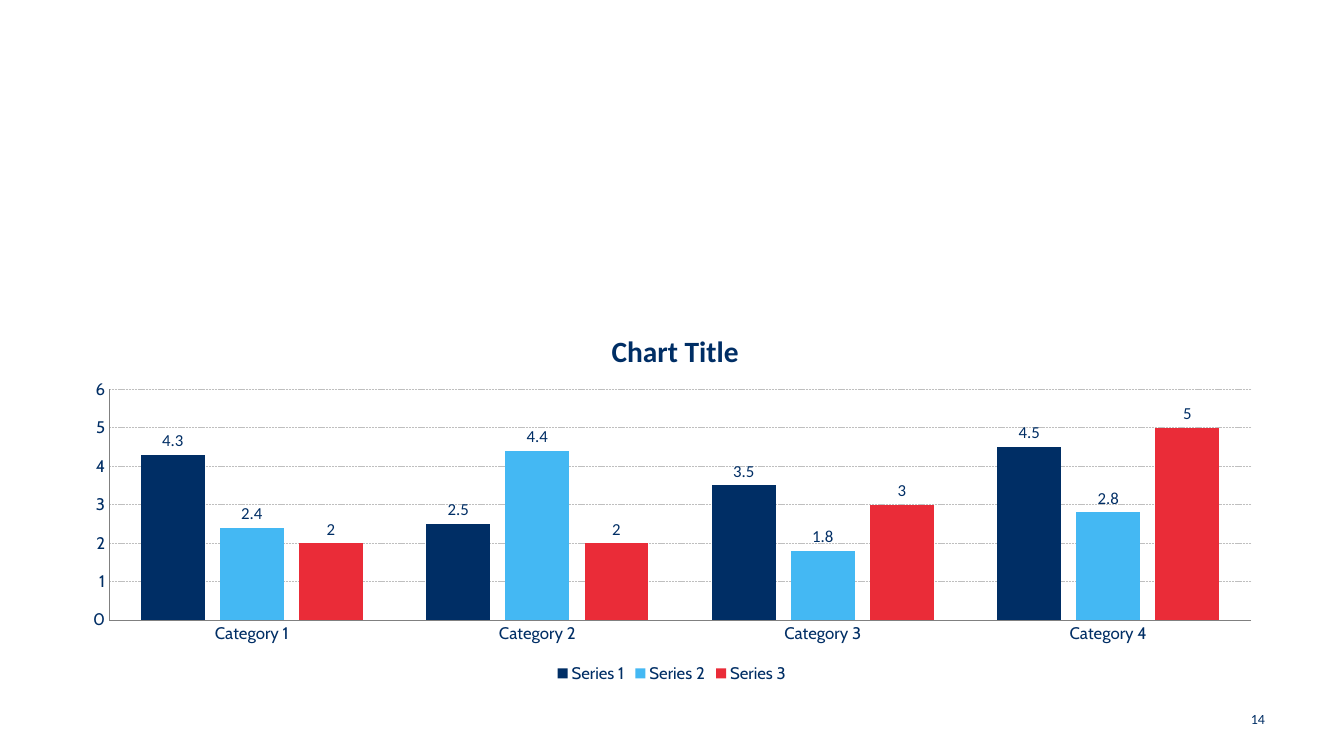
from lxml import etree
from pptx import Presentation, util as u
from pptx.chart.data import CategoryChartData
from pptx.dml.color import RGBColor
from pptx.enum import chart as ch, dml, text
from pptx.oxml.ns import qn

HUES = {
    "navy": "002E65",
    "sky": "44B8F3",
    "red": "EA2C38",
    "axis": "808080",
    "grid": "BFBFBF",
}
CATS = ["Category 1", "Category 2", "Category 3", "Category 4"]
ROWS = [
    ("Series 1", "navy", (4.3, 2.5, 3.5, 4.5)),
    ("Series 2", "sky", (2.4, 4.4, 1.8, 2.8)),
    ("Series 3", "red", (2, 2, 3, 5)),
]
WIDE, HIGH = u.Cm(30.4), u.Cm(9.65)


def hue(name):
    return RGBColor.from_string(HUES[name])


def set_font(font, size, face, bold=False):
    font.size = u.Pt(size)
    font.name = face
    font.bold = bold
    font.color.rgb = hue("navy")


def set_line(line, name):
    line.width = u.Pt(0.5)
    line.color.rgb = hue(name)


def place(part, index, left, top, wide=None, high=None):
    """Fix a chart part at lengths measured from the chart's corner."""
    for old in part.findall(qn("c:layout")):
        part.remove(old)
    layout = etree.Element(qn("c:layout"))
    part.insert(index, layout)
    box = etree.SubElement(layout, qn("c:manualLayout"))
    items = [("xMode", "edge"), ("yMode", "edge"),
             ("x", left / WIDE), ("y", top / HIGH)]
    if wide:
        items.insert(0, ("layoutTarget", "inner"))
        items += [("w", wide / WIDE), ("h", high / HIGH)]
    for tag, val in items:
        etree.SubElement(box, qn("c:" + tag)).set("val", str(val))


def add_title(chart):
    title = chart.chart_title
    title.text_frame.text = "Chart Title"
    set_font(title.text_frame.paragraphs[0].runs[0].font, 21, "Calibri", True)
    title.include_in_layout = False
    place(title._element, 1, u.Cm(13.55), u.Cm(0.53))


def style_axis(axis):
    axis.major_tick_mark = axis.minor_tick_mark = ch.XL_TICK_MARK.NONE
    set_font(axis.tick_labels.font, 12, "Cabin")
    set_line(axis.format.line, "axis")


def style_bars(plot):
    plot.gap_width = 100
    plot.overlap = -24
    plot.vary_by_categories = False
    for bars, (_, name, _) in zip(plot.series, ROWS):
        bars.format.fill.solid()
        bars.format.fill.fore_color.rgb = hue(name)
        tags = bars.data_labels
        tags.show_value = True
        tags.position = ch.XL_LABEL_POSITION.OUTSIDE_END
        set_font(tags.font, 12, "Calibri")


def add_bars(slide):
    data = CategoryChartData()
    data.categories = CATS
    for name, _, vals in ROWS:
        data.add_series(name, vals)
    chart = slide.shapes.add_chart(
        ch.XL_CHART_TYPE.COLUMN_CLUSTERED,
        u.Cm(1.73), u.Cm(7.67), WIDE, HIGH, data).chart
    set_font(chart.font, 10, "Cabin")
    add_title(chart)

    # Axes and grid
    style_axis(chart.category_axis)
    axis = chart.value_axis
    style_axis(axis)
    axis.minimum_scale, axis.maximum_scale, axis.major_unit = 0, 6, 1
    axis.has_major_gridlines = True
    grid = axis.major_gridlines.format.line
    set_line(grid, "grid")
    grid.dash_style = dml.MSO_LINE.SQUARE_DOT

    # Columns and plot area
    style_bars(chart.plots[0])
    area = chart._chartSpace.chart.plotArea
    place(area, 0, u.Cm(1.02), u.Cm(2.14), u.Cm(28.78), u.Cm(5.82))

    # Legend
    chart.has_legend = True
    chart.legend.position = ch.XL_LEGEND_POSITION.BOTTOM
    chart.legend.include_in_layout = False
    set_font(chart.legend.font, 12, "Cabin")


def add_number(slide, words):
    box = slide.shapes.add_textbox(
        u.Cm(24.79), u.Cm(17.6), u.Cm(7.34), u.Cm(1.02))
    frame = box.text_frame
    frame.word_wrap = True
    frame.vertical_anchor = text.MSO_ANCHOR.MIDDLE
    frame.text = words
    para = frame.paragraphs[0]
    para.alignment = text.PP_ALIGN.RIGHT
    set_font(para.runs[0].font, 10, "Calibri")


def main():
    deck = Presentation()
    deck.slide_width, deck.slide_height = u.Cm(33.87), u.Cm(19.05)
    slide = deck.slides.add_slide(deck.slide_layouts[6])
    add_number(slide, "14")
    add_bars(slide)
    deck.save("out.pptx")


if __name__ == "__main__":
    main()
